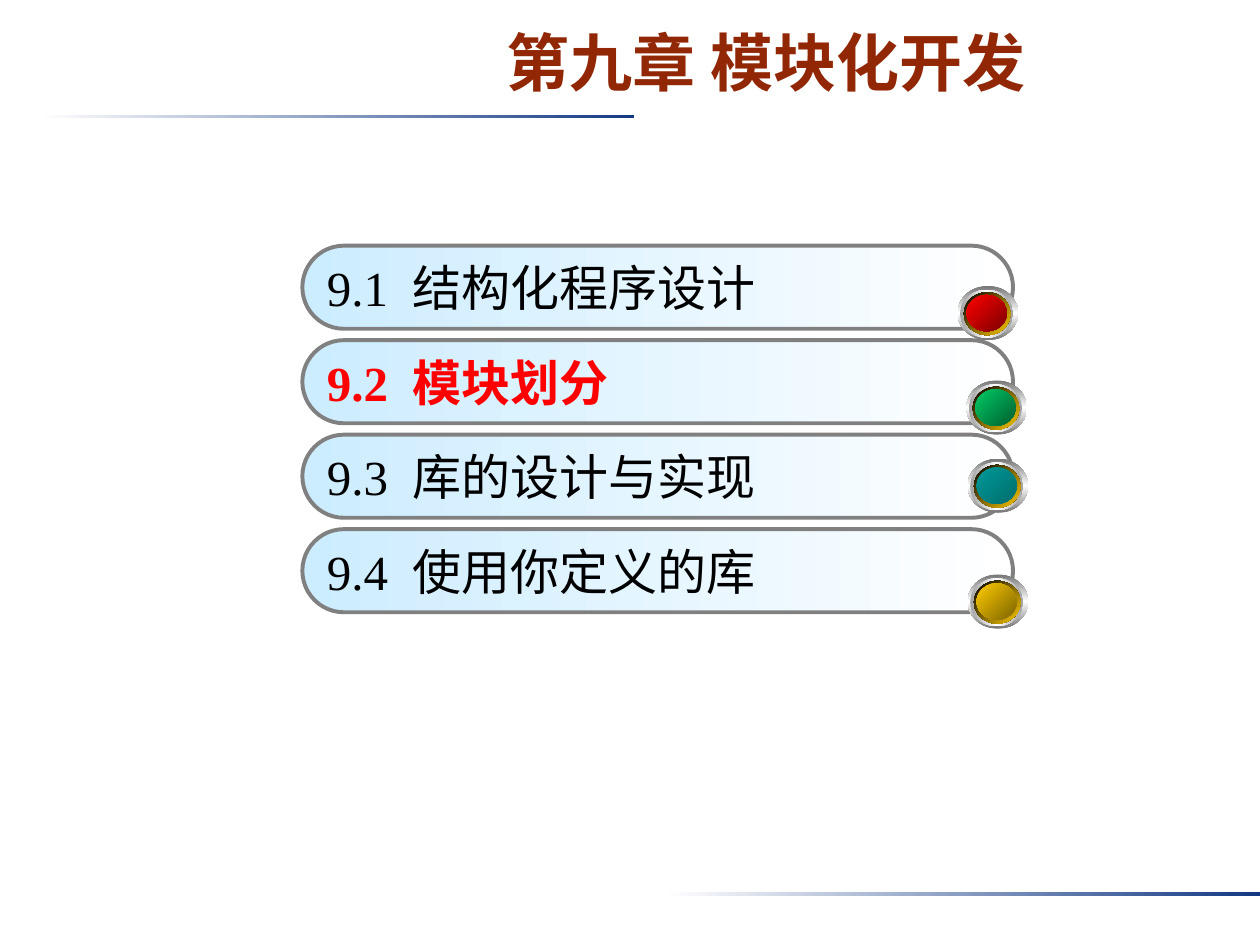
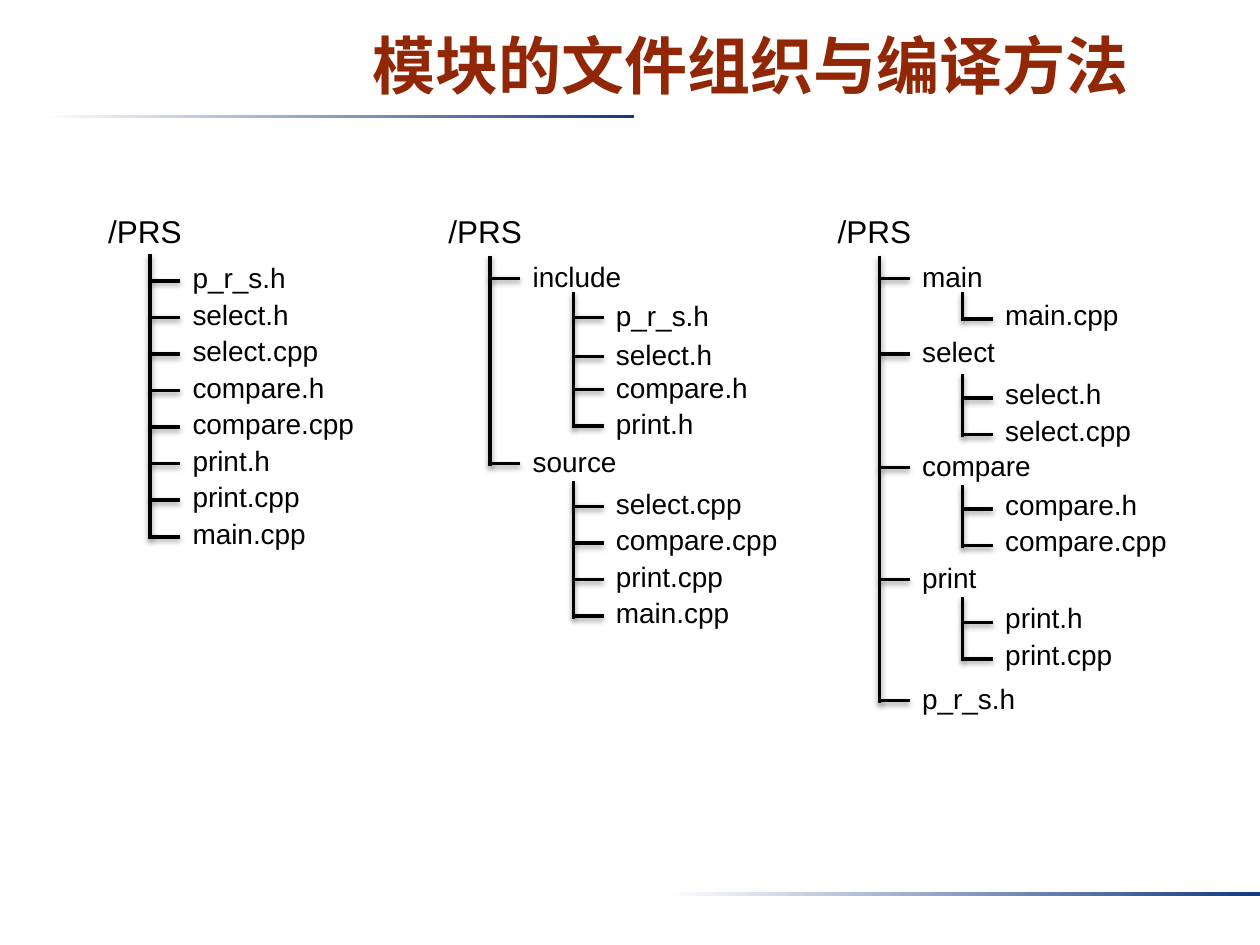
from dataclasses import dataclass

from lxml import etree
from pptx import Presentation
from pptx import util as u
from pptx.dml.color import RGBColor
from pptx.enum import shapes, text
from pptx.oxml.ns import qn

# Content: chapter list (number, name, current, orb left, orb top, orb colours)
CHAPTER_TITLE = "第九章 模块化开发"
SECTIONS = [
    ("9.1", "结构化程序设计", False, 7.6, 2.27, ("FF0000", "7C0000")),
    ("9.2", "模块划分", True, 7.67, 3.02, ("00CC66", "005E2F")),
    ("9.3", "库的设计与实现", False, 7.68, 3.64, ("009999", "006D6D")),
    ("9.4", "使用你定义的库", False, 7.68, 4.56, ("FFCC00", "7C6300")),
]

# Content: directory trees; a branch is (level, spine top, tick drop, files),
# and each file is (name, label top)
FILES_TITLE = "模块的文件组织与编译方法"
FLAT_FILES = ["p_r_s.h", "select.h", "select.cpp", "compare.h",
              "compare.cpp", "print.h", "print.cpp", "main.cpp"]
SOURCE_FILES = ["select.cpp", "compare.cpp", "print.cpp", "main.cpp"]
ROW = 0.29


def rows(names, top):
    return [(name, top + i * ROW) for i, name in enumerate(names)]


TREES = [
    (1.19, [(0, 2.02, 0.21, rows(FLAT_FILES, 2.02))]),
    (3.89, [
        (0, 2.03, 0.2, [("include", 2.01), ("source", 3.48)]),
        (1, 2.32, 0.2, [("p_r_s.h", 2.32), ("select.h", 2.63),
                        ("compare.h", 2.89), ("print.h", 3.18)]),
        (1, 3.82, 0.21, rows(SOURCE_FILES, 3.81)),
    ]),
    (6.98, [
        (0, 2.03, 0.2, [("main", 2.01), ("select", 2.61), ("compare", 3.51),
                        ("print", 4.4), ("p_r_s.h", 5.36)]),
        (1, 2.32, 0.22, rows(["main.cpp"], 2.31)),
        (1, 2.97, 0.22, rows(["select.h", "select.cpp"], 2.94)),
        (1, 3.85, 0.22, rows(["compare.h", "compare.cpp"], 3.82)),
        (1, 4.74, 0.22, rows(["print.h", "print.cpp"], 4.72)),
    ]),
]


@dataclass(frozen=True)
class Theme:
    title: str = "922706"
    ink: str = "000000"
    current: str = "FF0000"
    outline: str = "808080"
    rule: tuple = ("FFFFFF", "133984")
    pill: tuple = ("CCECFF", "FFFFFF")
    sans: str = "Arial"
    serif: str = "Times New Roman"
    title_size: int = 36
    section_size: int = 28
    root_size: int = 18
    file_size: int = 16


T = Theme()
# Orb rings from the outside in: inset x, inset y, width, height, colours, angle
RINGS = [
    (0, 0, 0.48, 0.43, ("767676", "FFFFFF", "767676"), 90),
    (0.02, 0.03, 0.42, 0.38, ("A2A2A2", "FFFFFF", "A2A2A2"), 0),
    (0.05, 0.05, 0.37, 0.34, ("000000", "FFCC00"), 45),
]
CORE = (0.07, 0.07, 0.32, 0.29)


def inches(*values):
    return [u.Inches(v) for v in values]


# Drawing helpers
def gradient(sp, colors, angle):
    sp.fill.gradient()
    grad = sp._element.spPr.find(qn("a:gradFill"))
    stops = grad.find(qn("a:gsLst"))
    for old in list(stops):
        stops.remove(old)
    for i, color in enumerate(colors):
        gs = etree.SubElement(stops, qn("a:gs"),
                              pos=str(100000 * i // (len(colors) - 1)))
        etree.SubElement(gs, qn("a:srgbClr"), val=color)
    grad.find(qn("a:lin")).set("ang", str(angle * 60000))


def add_gradient_shape(parent, kind, box, colors, angle=0):
    sp = parent.add_shape(kind, *inches(*box))
    sp.shadow.inherit = False
    gradient(sp, colors, angle)
    sp.line.fill.background()
    return sp


def style(p, size, color, font, bold=False):
    f = p.font
    f.size, f.name, f.bold = u.Pt(size), font, bold
    f.color.rgb = RGBColor.from_string(color)


def add_label(s, words, box, size, color=T.ink, bold=False):
    tf = s.shapes.add_textbox(*inches(*box)).text_frame
    tf.word_wrap = True
    tf.text = words
    style(tf.paragraphs[0], size, color, T.sans, bold)
    return tf


def add_branch_line(s, x1, y1, x2, y2):
    c = s.shapes.add_connector(shapes.MSO_CONNECTOR.STRAIGHT,
                               *inches(x1, y1, x2, y2))
    c.line.width = u.Pt(2)
    c.line.color.rgb = RGBColor.from_string(T.ink)
    effects = etree.SubElement(c._element.spPr, qn("a:effectLst"))
    shadow = etree.SubElement(effects, qn("a:outerShdw"), blurRad="40000",
                              dist="20000", dir="5400000", rotWithShape="0")
    color = etree.SubElement(shadow, qn("a:srgbClr"), val=T.ink)
    etree.SubElement(color, qn("a:alpha"), val="38000")


def add_slide(prs, title, title_box):
    s = prs.slides.add_slide(prs.slide_layouts[6])
    for left, top in ((0.31, 0.91), (5.28, 7.08)):
        add_gradient_shape(s.shapes, shapes.MSO_SHAPE.RECTANGLE,
                           (left, top, 4.72, 0.03), T.rule)
    tf = add_label(s, title, title_box, T.title_size, T.title, True)
    tf.margin_top = u.Inches(0.06)
    tf.paragraphs[0].alignment = text.PP_ALIGN.CENTER
    return s


def add_section(s, index, number, name, current, orb_x, orb_y, colors):
    group = s.shapes.add_group_shape().shapes
    # Pill with number and name
    pill = add_gradient_shape(group, shapes.MSO_SHAPE.ROUNDED_RECTANGLE,
                              (2.4, 1.95 + 0.75 * index, 5.64, 0.66), T.pill)
    pill.adjustments[0] = 0.5
    pill.line.color.rgb = RGBColor.from_string(T.outline)
    pill.line.width = u.Pt(2.25)
    tf = pill.text_frame
    tf.vertical_anchor = text.MSO_ANCHOR.MIDDLE
    tf.text = f"{number}\t{name}"
    p = tf.paragraphs[0]
    p.alignment = text.PP_ALIGN.LEFT
    tabs = etree.SubElement(p._p.get_or_add_pPr(), qn("a:tabLst"))
    etree.SubElement(tabs, qn("a:tab"), pos=str(u.Inches(0.68)), algn="l")
    style(p, T.section_size, T.current if current else T.ink, T.serif, current)
    # Orb
    for dx, dy, w, h, ring, angle in RINGS + [(*CORE, colors, 45)]:
        add_gradient_shape(group, shapes.MSO_SHAPE.OVAL,
                           (orb_x + dx, orb_y + dy, w, h), ring, angle)


def add_tree(s, trunk, branches):
    add_label(s, "/PRS", (trunk - 0.43, 1.63, 0.88, 0.4), T.root_size)
    for level, top, drop, files in branches:
        x = trunk + 0.66 * level
        add_branch_line(s, x, top, x, files[-1][1] + drop + 0.02)
        for name, y in files:
            add_branch_line(s, x, y + drop, x + 0.24, y + drop)
            add_label(s, name, (x + 0.24, y, 1.5, 0.37), T.file_size)


def main():
    prs = Presentation()
    prs.slide_width, prs.slide_height = inches(10, 7.5)

    # Chapter overview; upper sections overlap the lower ones
    s = add_slide(prs, CHAPTER_TITLE, (2.4, 0.13, 7.36, 0.75))
    for i, section in reversed(list(enumerate(SECTIONS))):
        add_section(s, i, *section)

    # File organisation
    s = add_slide(prs, FILES_TITLE, (2.46, 0.15, 6.99, 0.9))
    for trunk, branches in TREES:
        add_tree(s, trunk, branches)

    prs.save("out.pptx")


if __name__ == "__main__":
    main()
